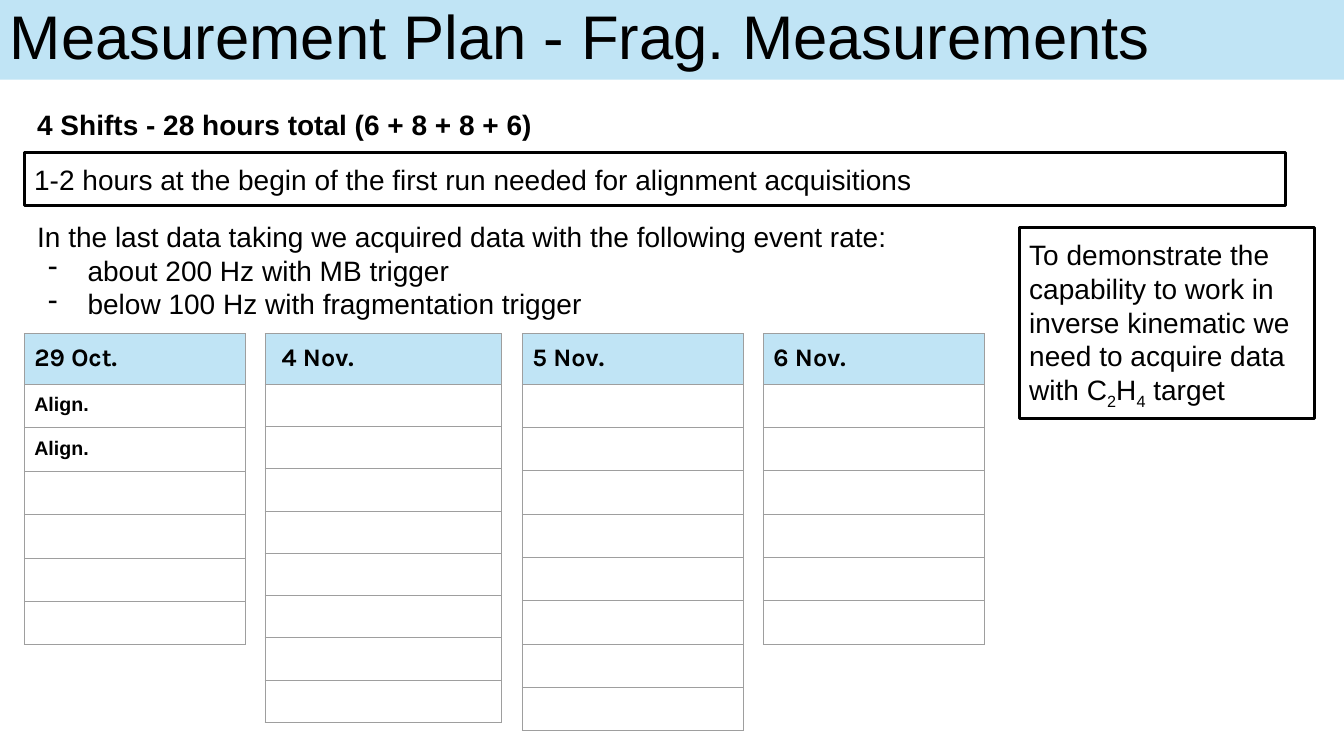
from lxml import etree
from pptx import Presentation, util as u
from pptx.dml.color import RGBColor
from pptx.enum import shapes, text
from pptx.oxml import ns

BLACK = RGBColor(0x00, 0x00, 0x00)
LIGHT_BLUE = RGBColor(0xC0, 0xE4, 0xF5)
GRID_GRAY = RGBColor(0x9E, 0x9E, 0x9E)


class SlideBuilder:
    body_font = "Arial"
    header_font = "Karla"
    body_size = 20
    inset = 0.1

    def __init__(self, slide):
        self.slide = slide

    def style(self, paragraph, size, bold=False, name=body_font):
        font = paragraph.font
        font.name, font.size, font.bold = name, u.Pt(size), bold
        font.color.rgb = BLACK
        paragraph.alignment = text.PP_ALIGN.LEFT

    def add_bullet(self, paragraph):
        properties = paragraph._p.get_or_add_pPr()
        properties.set("marL", str(u.Inches(0.5)))
        properties.set("indent", str(u.Inches(-0.39)))
        color = etree.SubElement(properties, ns.qn("a:buClr"))
        etree.SubElement(color, ns.qn("a:srgbClr"), val=str(BLACK))
        etree.SubElement(properties, ns.qn("a:buChar"), char="-")

    def prepare_frame(self, frame, vertical):
        frame.word_wrap = True
        frame.vertical_anchor = text.MSO_ANCHOR.TOP
        frame.margin_left = frame.margin_right = u.Inches(self.inset)
        frame.margin_top = frame.margin_bottom = u.Inches(vertical)

    def rectangle(self, left, top, width, height, vertical=inset):
        shape = self.slide.shapes.add_shape(
            shapes.MSO_SHAPE.RECTANGLE, *map(u.Inches, (left, top, width, height)))
        shape.shadow.inherit = False
        self.prepare_frame(shape.text_frame, vertical)
        return shape

    def title(self, words):
        shape = self.rectangle(0, 0, 13.33, 0.79, 0.05)
        shape.fill.solid()
        shape.fill.fore_color.rgb = LIGHT_BLUE
        shape.line.fill.background()
        shape.text_frame.vertical_anchor = text.MSO_ANCHOR.MIDDLE
        paragraph = shape.text_frame.paragraphs[0]
        paragraph.text = words
        paragraph.line_spacing = 0.9
        self.style(paragraph, 44)

    def framed_text(self, left, top, width, height, parts):
        shape = self.rectangle(left, top, width, height)
        shape.fill.background()
        shape.line.color.rgb = BLACK
        shape.line.width = u.Pt(2.25)
        paragraph = shape.text_frame.paragraphs[0]
        for words, subscript in parts:
            run = paragraph.add_run()
            run.text = words
            if subscript:
                run._r.get_or_add_rPr().set("baseline", "-25000")
        self.style(paragraph, self.body_size)

    def text_box(self, top, height, lead, bullets=(), bold=False):
        shape = self.slide.shapes.add_textbox(
            *map(u.Inches, (0.27, top, 12.51, height)))
        frame = shape.text_frame
        self.prepare_frame(frame, self.inset)
        frame.text = "\n".join([lead, *bullets])
        for index, paragraph in enumerate(frame.paragraphs):
            if index:
                self.add_bullet(paragraph)
            self.style(paragraph, self.body_size, bold)

    def border(self, cell):
        properties = cell._tc.get_or_add_tcPr()
        for side in ("lnL", "lnR", "lnT", "lnB"):
            line = etree.SubElement(properties, ns.qn(f"a:{side}"), w=str(u.Pt(0.75)))
            fill = etree.SubElement(line, ns.qn("a:solidFill"))
            etree.SubElement(fill, ns.qn("a:srgbClr"), val=str(GRID_GRAY))

    def shift_table(self, left, width, row_height, day, hours, entries=()):
        header_height = 0.5
        table = self.slide.shapes.add_table(
            hours + 1, 1, u.Inches(left), u.Inches(3.31), u.Inches(width),
            u.Inches(header_height + hours * row_height)).table
        table.first_row = table.horz_banding = False
        labels = [day, *entries] + [""] * (hours - len(entries))
        for index, label in enumerate(labels):
            is_header = index == 0
            table.rows[index].height = u.Inches(header_height if is_header else row_height)
            cell = table.cell(index, 0)
            self.border(cell)
            cell.margin_left = cell.margin_right = u.Inches(self.inset)
            cell.margin_top = cell.margin_bottom = u.Inches(self.inset if label else 0.05)
            if is_header:
                cell.fill.solid()
                cell.fill.fore_color.rgb = LIGHT_BLUE
            else:
                cell.fill.background()
            if label:
                cell.text = label
                self.style(cell.text_frame.paragraphs[0], 18 if is_header else 14, True,
                           self.header_font if is_header else self.body_font)


def main():
    presentation = Presentation()
    presentation.slide_width = u.Inches(13.33)
    presentation.slide_height = u.Inches(7.5)
    builder = SlideBuilder(presentation.slides.add_slide(presentation.slide_layouts[6]))

    builder.title("Measurement Plan - Frag. Measurements")
    builder.text_box(
        2.08, 1.18,
        "In the last data taking we acquired data with the following event rate:",
        ["about 200 Hz with MB trigger", "below 100 Hz with fragmentation trigger"])
    builder.text_box(0.97, 0.53, "4 Shifts - 28 hours total (6 + 8 + 8 + 6)", bold=True)
    builder.framed_text(0.24, 1.51, 12.51, 0.53, [
        ("1-2 hours at the begin of the first run needed for alignment acquisitions", False)])
    builder.framed_text(10.11, 2.26, 2.93, 1.89, [
        ("To demonstrate the capability to work in inverse kinematic "
         "we need to acquire data with C", False),
        ("2", True), ("H", False), ("4", True), (" target", False)])

    builder.shift_table(0.24, 2.19, 0.43, "29 Oct.", 6, ["Align.", "Align."])
    builder.shift_table(2.63, 2.34, 0.42, " 4 Nov.", 8)
    builder.shift_table(5.18, 2.19, 0.43, "5 Nov.", 8)
    builder.shift_table(7.57, 2.19, 0.43, "6 Nov.", 6)

    presentation.save("out.pptx")


if __name__ == "__main__":
    main()
